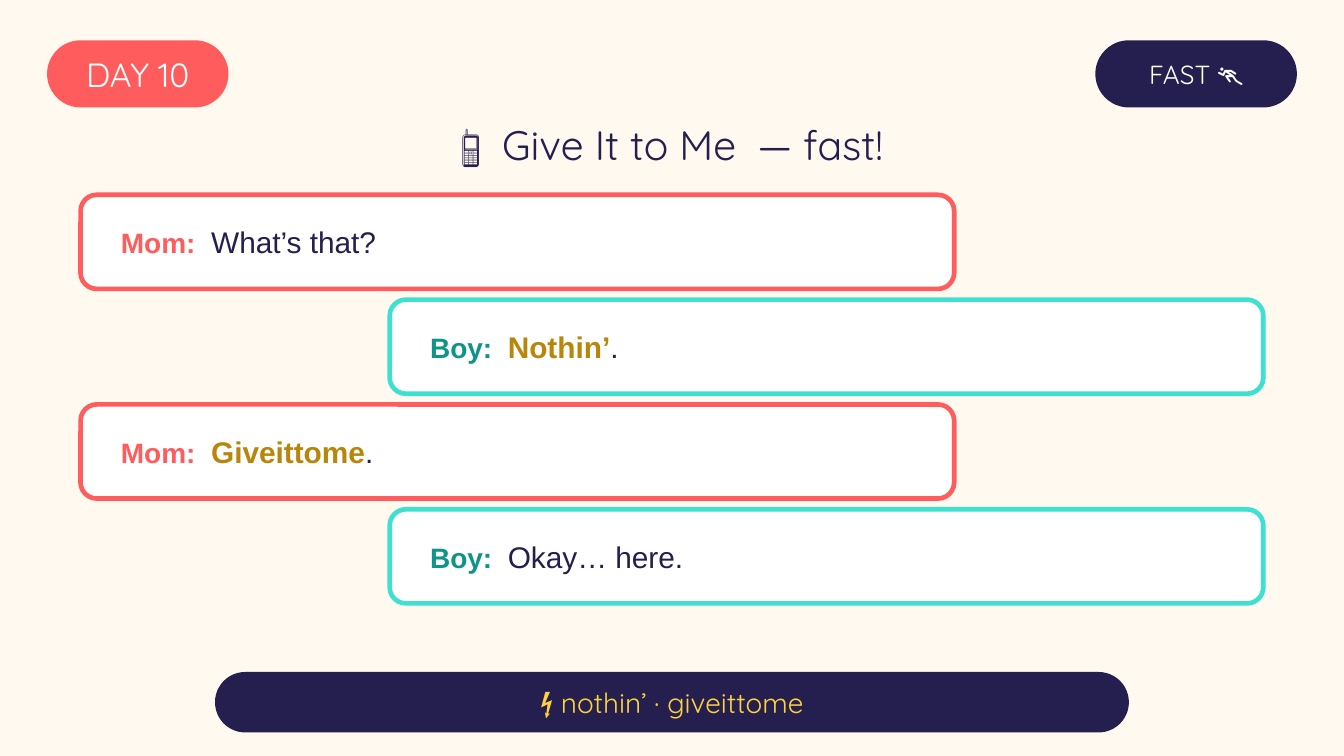
"""Build the Day 10 fast dialogue slide."""
from pptx import Presentation
from pptx.dml.color import RGBColor
from pptx.enum.shapes import MSO_SHAPE
from pptx.enum.text import MSO_ANCHOR, MSO_AUTO_SIZE, PP_ALIGN
from pptx.util import Pt

COLORS = {
    "cream": "FFF9EF", "white": "FFFFFF", "navy": "241F4E", "coral": "FF5D5D",
    "aqua": "3EE0CF", "teal": "0E9488", "gold": "B8860B", "yellow": "FFD23F",
}
SPEAKERS = {
    "Mom": {"left": 43.2, "border": "coral", "label": "coral"},
    "Boy": {"left": 208.8, "border": "aqua", "label": "teal"},
}
DIALOGUE = [
    ("Mom", "", "What’s that?"),
    ("Boy", "Nothin’", "."),
    ("Mom", "Giveittome", "."),
    ("Boy", "", "Okay… here."),
]
BUBBLE_WIDTH, BUBBLE_HEIGHT, BUBBLE_STEP = 468, 50.4, 56.16
DIALOGUE_TOP = 104.4


def rgb(color):
    """Return the named palette colour."""
    return RGBColor.from_string(COLORS[color])


def add_run(paragraph, text, size, color, font, bold=False, spacing=0):
    """Append one formatted run, with optional letter spacing in points."""
    run = paragraph.add_run()
    run.text = text
    run.font.size = Pt(size)
    run.font.name = font
    run.font.bold = bold
    run.font.color.rgb = rgb(color)
    if spacing:
        run._r.get_or_add_rPr().set("spc", str(round(spacing * 100)))


def set_frame(frame, inset, align):
    """Centre the text vertically, set side insets and return its paragraph."""
    frame.word_wrap = True
    frame.auto_size = MSO_AUTO_SIZE.NONE
    frame.vertical_anchor = MSO_ANCHOR.MIDDLE
    frame.margin_left = frame.margin_right = Pt(inset)
    frame.margin_top = frame.margin_bottom = 0
    paragraph = frame.paragraphs[0]
    paragraph.alignment = align
    return paragraph


def add_rounded(slide, box, radius, fill, border=None):
    """Draw a rounded rectangle with the given corner radius."""
    rounded = slide.shapes.add_shape(MSO_SHAPE.ROUNDED_RECTANGLE, *map(Pt, box))
    rounded.adjustments[0] = radius / box[3]
    rounded.shadow.inherit = False
    rounded.fill.solid()
    rounded.fill.fore_color.rgb = rgb(fill)
    if border:
        rounded.line.color.rgb = rgb(border)
        rounded.line.width = Pt(2.5)
    else:
        rounded.line.fill.background()
    return rounded


def add_pill(slide, box, text, size, fill, color):
    """Draw a fully rounded label with centred text."""
    pill = add_rounded(slide, box, box[3] / 2, fill)
    paragraph = set_frame(pill.text_frame, 0, PP_ALIGN.CENTER)
    add_run(paragraph, text, size, color, "Quicksand")


def add_heading(slide, box):
    """Place and format the slide title."""
    title = slide.shapes.title
    title.left, title.top, title.width, title.height = map(Pt, box)
    paragraph = set_frame(title.text_frame, 7.2, PP_ALIGN.CENTER)
    for text, spacing in [("📱", 0), (" ", 5.5), ("Give It to Me", 0),
                          (" ", 5.5), ("— fast!", 0)]:
        add_run(paragraph, text, 22, "navy", "Quicksand", spacing=spacing)


def add_bubble(slide, box, speaker, stressed, plain):
    """Draw one speech bubble with its speaker, stressed and plain words."""
    style = SPEAKERS[speaker]
    bubble = add_rounded(slide, box, 8.64, "white", style["border"])
    paragraph = set_frame(bubble.text_frame, 19.1, PP_ALIGN.LEFT)
    add_run(paragraph, f"{speaker}:", 15, style["label"], "Arial", bold=True)
    add_run(paragraph, " ", 15, style["label"], "Arial", bold=True, spacing=4.17)
    if stressed:
        add_run(paragraph, stressed, 16, "gold", "Arial", bold=True)
    add_run(paragraph, plain, 16, "navy", "Arial")


def add_dialogue(slide, top):
    """Stack the speech bubbles, each on its speaker's side."""
    for row, (speaker, stressed, plain) in enumerate(DIALOGUE):
        box = (SPEAKERS[speaker]["left"], top + row * BUBBLE_STEP,
               BUBBLE_WIDTH, BUBBLE_HEIGHT)
        add_bubble(slide, box, speaker, stressed, plain)


def main():
    """Assemble and save the slide."""
    deck = Presentation()
    deck.slide_width, deck.slide_height = Pt(720), Pt(405)
    slide = deck.slides.add_slide(deck.slide_layouts[5])
    slide.background.fill.solid()
    slide.background.fill.fore_color.rgb = rgb("cream")
    add_pill(slide, (25.2, 21.6, 97.2, 36), "DAY 10", 18, "coral", "white")
    add_pill(slide, (586.8, 21.6, 108, 36), "FAST 🏃", 14, "navy", "white")
    add_heading(slide, (0, 59.04, 720, 36))
    add_dialogue(slide, DIALOGUE_TOP)
    add_pill(slide, (115.2, 360, 489.6, 32.4), "⚡ nothin’ · giveittome", 15,
             "navy", "yellow")
    deck.save("out.pptx")


if __name__ == "__main__":
    main()
